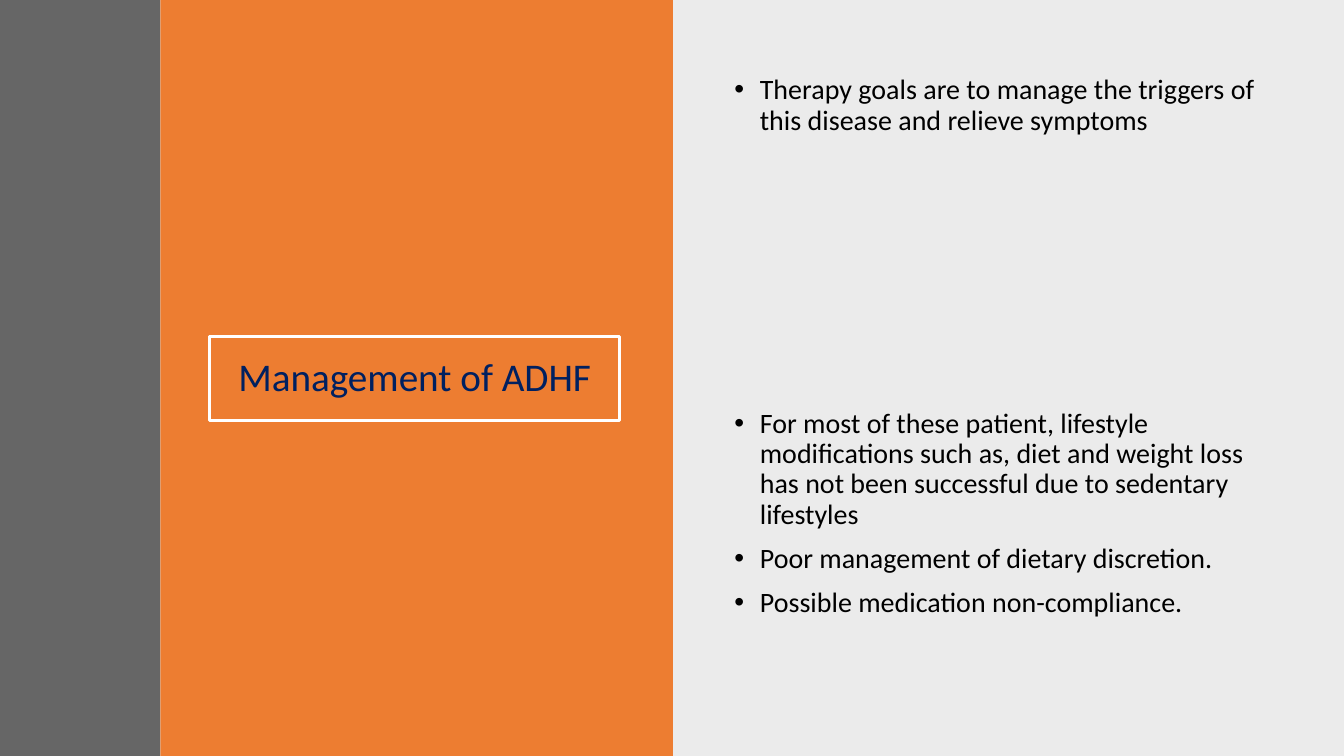
from dataclasses import dataclass

from pptx import Presentation
from pptx.dml.color import RGBColor
from pptx.enum.shapes import MSO_SHAPE
from pptx.enum.text import MSO_ANCHOR, PP_ALIGN
from pptx.oxml.ns import qn
from pptx.slide import Slide
from pptx.text.text import TextFrame
from pptx.util import Cm, Pt
from lxml import etree

RECT = MSO_SHAPE.RECTANGLE
MIDDLE, TOP = MSO_ANCHOR.MIDDLE, MSO_ANCHOR.TOP
CENTER, LEFT = PP_ALIGN.CENTER, PP_ALIGN.LEFT

COLORS = {
    "black": "000000",
    "orange": "ED7D31",
    "gray": "404040",
    "navy": "002060",
    "white": "FFFFFF",
}
FONT = "Calibri"
SLIDE_W, SLIDE_H = 33.87, 19.05
INDENT = 0.64


@dataclass
class Panel:
    left: float
    width: float
    color: str
    opacity: int = 100


@dataclass
class BulletBox:
    top: float
    items: list[str]


PANELS = [
    Panel(16.94, 16.93, "black", 8),
    Panel(4.04, 12.92, "orange"),
    Panel(0, 4.04, "gray", 80),
]

BULLET_BOXES = [
    BulletBox(1.78, [
        "Therapy goals are to manage the triggers of this disease and relieve symptoms",
    ]),
    BulletBox(10.19, [
        "For most of these patient, lifestyle modifications such as, diet and weight loss "
        "has not been successful due to sedentary lifestyles",
        "Poor management of dietary discretion.",
        "Possible medication non-compliance.",
    ]),
]


def rgb(name: str) -> RGBColor:
    return RGBColor.from_string(COLORS[name])


def add_panel(s: Slide, panel: Panel) -> None:
    sp = s.shapes.add_shape(RECT, Cm(panel.left), 0, Cm(panel.width), Cm(SLIDE_H))
    sp.shadow.inherit = False
    sp.fill.solid()
    sp.fill.fore_color.rgb = rgb(panel.color)
    sp.line.fill.background()
    if panel.opacity < 100:
        clr = sp.fill._xPr.find(".//" + qn("a:srgbClr"))
        etree.SubElement(clr, qn("a:alpha"), val=str(panel.opacity * 1000))


def write_paragraphs(tf: TextFrame, items: list[str], size: int, color: str,
                     paragraph_format: dict) -> None:
    tf.word_wrap = True
    for i, item in enumerate(items):
        p = tf.add_paragraph() if i else tf.paragraphs[0]
        for name, value in paragraph_format.items():
            setattr(p, name, value)
        r = p.add_run()
        r.text = item
        for name, value in {"name": FONT, "size": Pt(size)}.items():
            setattr(r.font, name, value)
        r.font.color.rgb = rgb(color)


def add_title(s: Slide, text: str) -> None:
    sp = s.shapes.add_shape(RECT, Cm(5.28), Cm(8.48), Cm(10.34), Cm(2.11))
    sp.shadow.inherit = False
    sp.fill.background()
    sp.line.color.rgb = rgb("white")
    sp.line.width = Pt(2)
    sp.text_frame.vertical_anchor = MIDDLE
    write_paragraphs(sp.text_frame, [text], 28, "navy",
                     {"alignment": CENTER, "line_spacing": 0.9})


def add_bullets(s: Slide, box: BulletBox) -> None:
    sp = s.shapes.add_textbox(Cm(18.26), Cm(box.top), Cm(14.05), Cm(7.09))
    tf = sp.text_frame
    tf.vertical_anchor = TOP
    write_paragraphs(tf, box.items, 20, "black",
                     {"alignment": LEFT, "line_spacing": 0.9, "space_before": Pt(10)})
    for p in tf.paragraphs:
        pPr = p._p.get_or_add_pPr()
        pPr.set("marL", str(Cm(INDENT)))
        pPr.set("indent", str(-Cm(INDENT)))
        etree.SubElement(pPr, qn("a:buFont"), typeface="Arial")
        etree.SubElement(pPr, qn("a:buChar"), char="•")


def main() -> None:
    prs = Presentation()
    prs.slide_width, prs.slide_height = Cm(SLIDE_W), Cm(SLIDE_H)
    s = prs.slides.add_slide(prs.slide_layouts[6])
    for panel in PANELS:
        add_panel(s, panel)
    add_title(s, "Management of ADHF")
    for box in BULLET_BOXES:
        add_bullets(s, box)
    prs.save("out.pptx")


if __name__ == "__main__":
    main()
